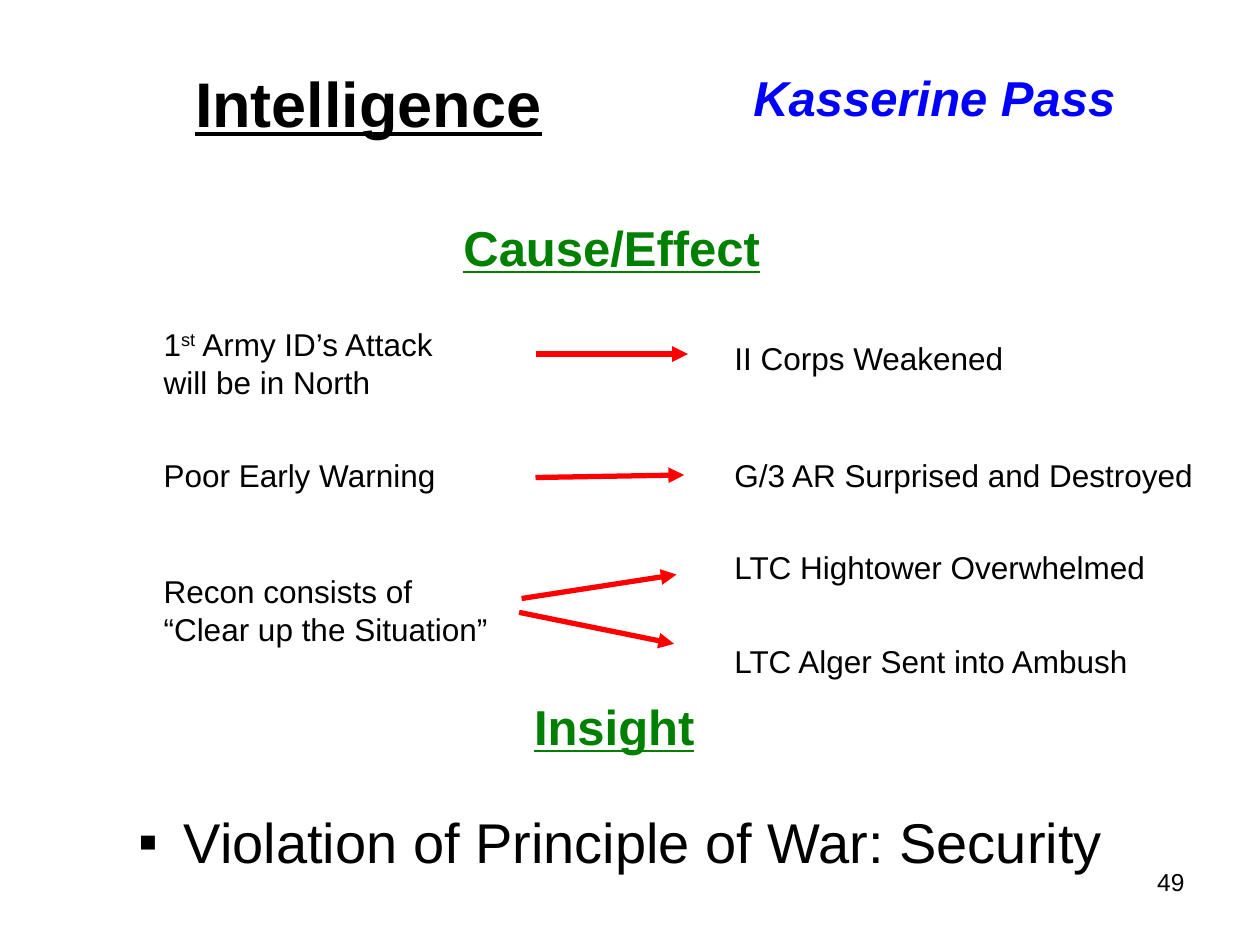
from typing import NamedTuple

from lxml.etree import SubElement
from pptx import Presentation
from pptx.dml.color import RGBColor
from pptx.enum.shapes import MSO_CONNECTOR
from pptx.enum.text import MSO_ANCHOR, MSO_AUTO_SIZE, PP_ALIGN
from pptx.oxml.ns import qn
from pptx.util import Inches, Pt

BLACK = RGBColor(0x00, 0x00, 0x00)
BLUE = RGBColor(0x00, 0x00, 0xFF)
GREEN = RGBColor(0x00, 0x80, 0x00)
RED = RGBColor(0xFF, 0x00, 0x00)
FONT = "Arial"
LEFT, RIGHT = 1.2, 5.73


class Box(NamedTuple):
    x: float
    y: float
    w: float
    h: float


class Note(NamedTuple):
    text: str
    box: Box


class Arrow(NamedTuple):
    x1: float
    y1: float
    x2: float
    y2: float


NOTES = [
    Note("Poor Early Warning", Box(LEFT, 3.57, 2.8, 0.4)),
    Note("Recon consists of “Clear up the Situation”", Box(LEFT, 4.49, 2.8, 0.7)),
    Note("II Corps Weakened", Box(RIGHT, 2.64, 2.69, 0.4)),
    Note("G/3 AR Surprised and Destroyed", Box(RIGHT, 3.57, 4.06, 0.4)),
    Note("LTC Hightower Overwhelmed", Box(RIGHT, 4.3, 4.06, 0.4)),
    Note("LTC Alger Sent into Ambush", Box(RIGHT, 5.05, 4.06, 0.4)),
]
HEADS = [
    Note("Cause/Effect", Box(3.58, 1.68, 2.56, 0.57)),
    Note("Insight", Box(4.14, 5.48, 1.48, 0.57)),
]
ARROWS = [
    Arrow(4.25, 2.81, 5.46, 2.81),
    Arrow(4.25, 3.79, 5.43, 3.77),
    Arrow(4.14, 4.75, 5.37, 4.56),
    Arrow(4.12, 4.86, 5.35, 5.11),
]


def place(shape, box: Box) -> None:
    shape.left, shape.top, shape.width, shape.height = map(Inches, box)


def add_run(para, text: str, size: float = 18, color: RGBColor = BLACK,
            bold: bool = False, italic: bool = False, line: bool = False):
    run = para.add_run()
    run.text = text
    font = run.font
    font.name, font.size = FONT, Pt(size)
    font.bold, font.italic, font.underline = bold, italic, line
    font.color.rgb = color
    return run


def write(shape, text: str, align=PP_ALIGN.LEFT, anchor=MSO_ANCHOR.TOP,
          wrap: bool = True, **style):
    """Set the frame of a shape, write its one paragraph and return that."""
    frame = shape.text_frame
    frame.word_wrap = wrap
    frame.auto_size = MSO_AUTO_SIZE.NONE
    frame.vertical_anchor = anchor
    para = frame.paragraphs[0]
    para.alignment = align
    para.space_before = Pt(0)
    add_run(para, text, **style)
    return para


def add_text(slide, text: str, box: Box, **style):
    return write(slide.shapes.add_textbox(*map(Inches, box)), text, **style)


def add_arrow(slide, arrow: Arrow) -> None:
    link = slide.shapes.add_connector(MSO_CONNECTOR.STRAIGHT, *map(Inches, arrow))
    link.line.color.rgb = RED
    link.line.width = Pt(3)
    SubElement(link.line._get_or_add_ln(), qn("a:tailEnd"), type="triangle")
    SubElement(link._element.spPr, qn("a:effectLst"))


def add_bullet(para, mark: str, indent: float) -> None:
    props = para._p.get_or_add_pPr()
    props.set("marL", str(Inches(indent)))
    props.set("indent", str(-Inches(indent)))
    SubElement(props, qn("a:buFont"), typeface=FONT)
    SubElement(props, qn("a:buChar"), char=mark)


def main() -> None:
    deck = Presentation()
    deck.slide_width, deck.slide_height = Inches(10), Inches(7.5)
    slide = deck.slides.add_slide(deck.slide_layouts[1])

    title, body = slide.placeholders
    place(title, Box(5.33, 0.48, 4.17, 0.58))
    write(title, "Kasserine Pass", align=PP_ALIGN.CENTER, anchor=MSO_ANCHOR.MIDDLE,
          size=28, color=BLUE, bold=True, italic=True)
    place(body, Box(1, 6.36, 8.16, 0.63))
    para = write(body, "Violation of Principle of War: Security", size=32)
    add_bullet(para, "▪", 0.36)

    add_text(slide, "Intelligence", Box(1.45, 0.46, 2.95, 0.7), wrap=False,
             size=36, bold=True, line=True)
    for head in HEADS:
        add_text(slide, head.text, head.box, wrap=False,
                 size=28, color=GREEN, bold=True, line=True)

    para = add_text(slide, "1", Box(LEFT, 2.53, 2.69, 0.7))
    raised = add_run(para, "st")
    raised.font._element.set("baseline", "30000")
    add_run(para, " Army ID’s Attack will be in North")
    for note in NOTES:
        add_text(slide, note.text, note.box)
    for arrow in ARROWS:
        add_arrow(slide, arrow)

    add_text(slide, "49", Box(7.17, 6.83, 2.33, 0.52), align=PP_ALIGN.RIGHT, size=14)
    deck.save("out.pptx")


if __name__ == "__main__":
    main()
